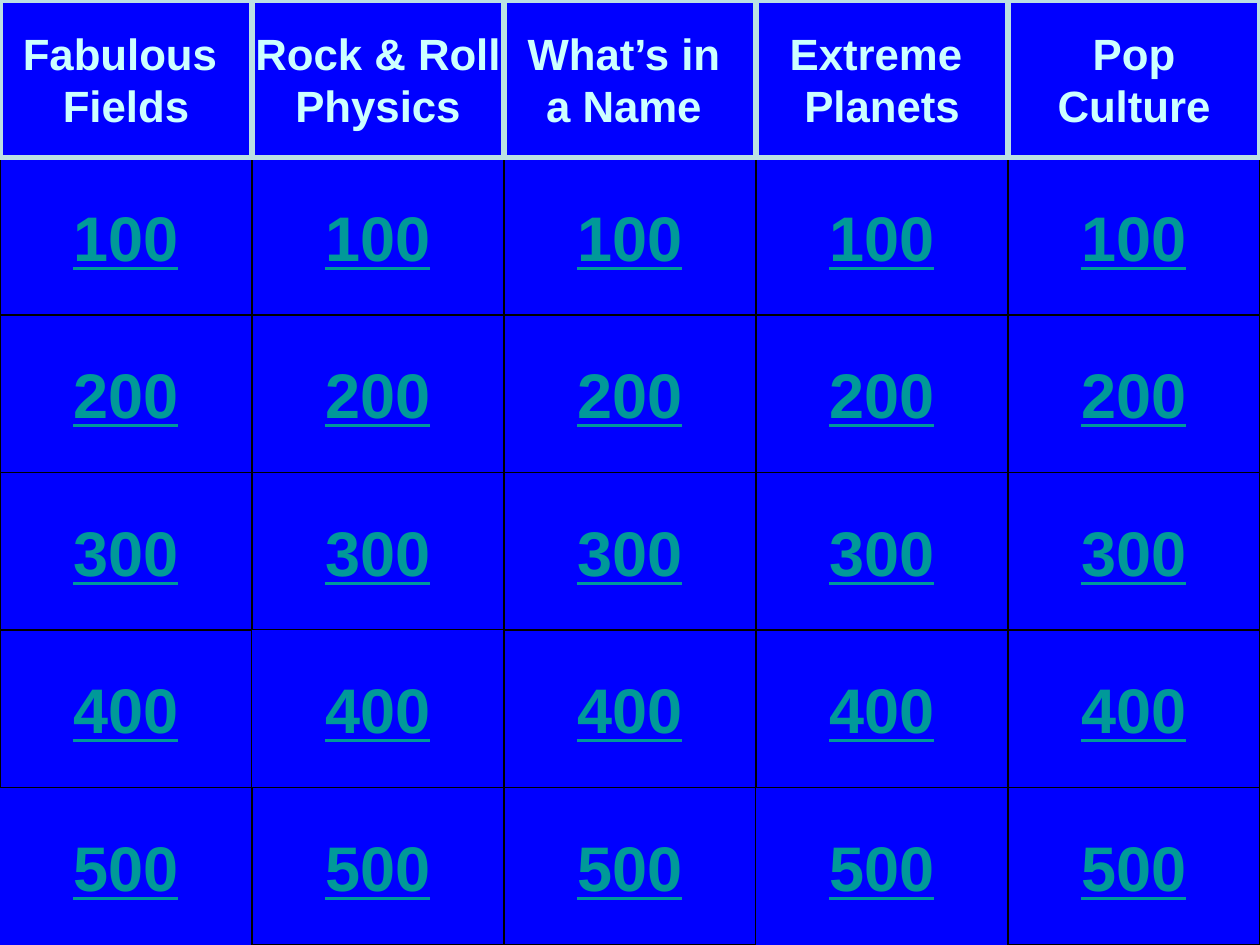
from dataclasses import dataclass

from pptx import Presentation, util as u
from pptx.dml.color import RGBColor
from pptx.enum import shapes, text


@dataclass(frozen=True)
class Theme:
    font: str = "Arial"
    board: RGBColor = RGBColor(0x00, 0x00, 0xFF)
    heading: RGBColor = RGBColor(0xCC, 0xFF, 0xFF)
    heading_line: RGBColor = RGBColor(0xBB, 0xE0, 0xE3)
    value: RGBColor = RGBColor(0x00, 0x99, 0x99)
    value_line: RGBColor = RGBColor(0x00, 0x00, 0x00)
    heading_size: u.Pt = u.Pt(25)
    value_size: u.Pt = u.Pt(36)
    heading_width: u.Pt = u.Pt(3)
    value_width: u.Pt = u.Pt(0.75)


THEME = Theme()
CELL_WIDTH = u.Cm(5.08)
CELL_HEIGHT = u.Cm(3.18)
SLIDE_WIDTH = u.Cm(25.4)
SLIDE_HEIGHT = u.Cm(19.05)
CATEGORIES = [
    ["Fabulous ", "Fields"],
    ["Rock & Roll", "Physics"],
    ["What’s in ", "a Name "],
    ["Extreme ", "Planets"],
    ["Pop", "Culture"],
]
VALUES = [100, 200, 300, 400, 500]
UNLINED = {(0, 500), (1, 400), (3, 500)}


def apply_format(target, values):
    for name, value in values.items():
        setattr(target, name, value)


def add_cell(page, kind, column, row, lines, size, color, underline=None):
    row_height = SLIDE_HEIGHT / (len(VALUES) + 1)
    box = page.shapes.add_shape(
        kind, CELL_WIDTH * column, round(row_height * row), CELL_WIDTH, round(row_height)
    )
    box.shadow.inherit = False
    box.fill.solid()
    box.fill.fore_color.rgb = THEME.board
    frame = box.text_frame
    apply_format(frame, {"word_wrap": False, "vertical_anchor": text.MSO_ANCHOR.MIDDLE})
    for index, line in enumerate(lines):
        para = frame.paragraphs[0] if index == 0 else frame.add_paragraph()
        para.alignment = text.PP_ALIGN.CENTER
        span = para.add_run()
        span.text = line
        apply_format(
            span.font,
            {"name": THEME.font, "size": size, "bold": True, "underline": underline},
        )
        span.font.color.rgb = color
    return box


def set_outline(box, color, width):
    box.line.color.rgb = color
    box.line.width = width


def add_value(page, column, row, value):
    box = add_cell(
        page, shapes.MSO_SHAPE.ACTION_BUTTON_CUSTOM, column, row,
        [str(value)], THEME.value_size, THEME.value, True,
    )
    if (column, value) in UNLINED:
        box.line.fill.background()
    else:
        set_outline(box, THEME.value_line, THEME.value_width)


def add_heading(page, column, lines):
    box = add_cell(
        page, shapes.MSO_SHAPE.RECTANGLE, column, 0,
        lines, THEME.heading_size, THEME.heading,
    )
    set_outline(box, THEME.heading_line, THEME.heading_width)


def main():
    deck = Presentation()
    apply_format(deck, {"slide_width": SLIDE_WIDTH, "slide_height": SLIDE_HEIGHT})
    page = deck.slides.add_slide(deck.slide_layouts[6])
    page.background.fill.solid()
    page.background.fill.fore_color.rgb = THEME.board
    for column in range(len(CATEGORIES)):
        for row, value in enumerate(VALUES, start=1):
            add_value(page, column, row, value)
    for column, lines in enumerate(CATEGORIES):
        add_heading(page, column, lines)
    deck.save("out.pptx")


if __name__ == "__main__":
    main()
